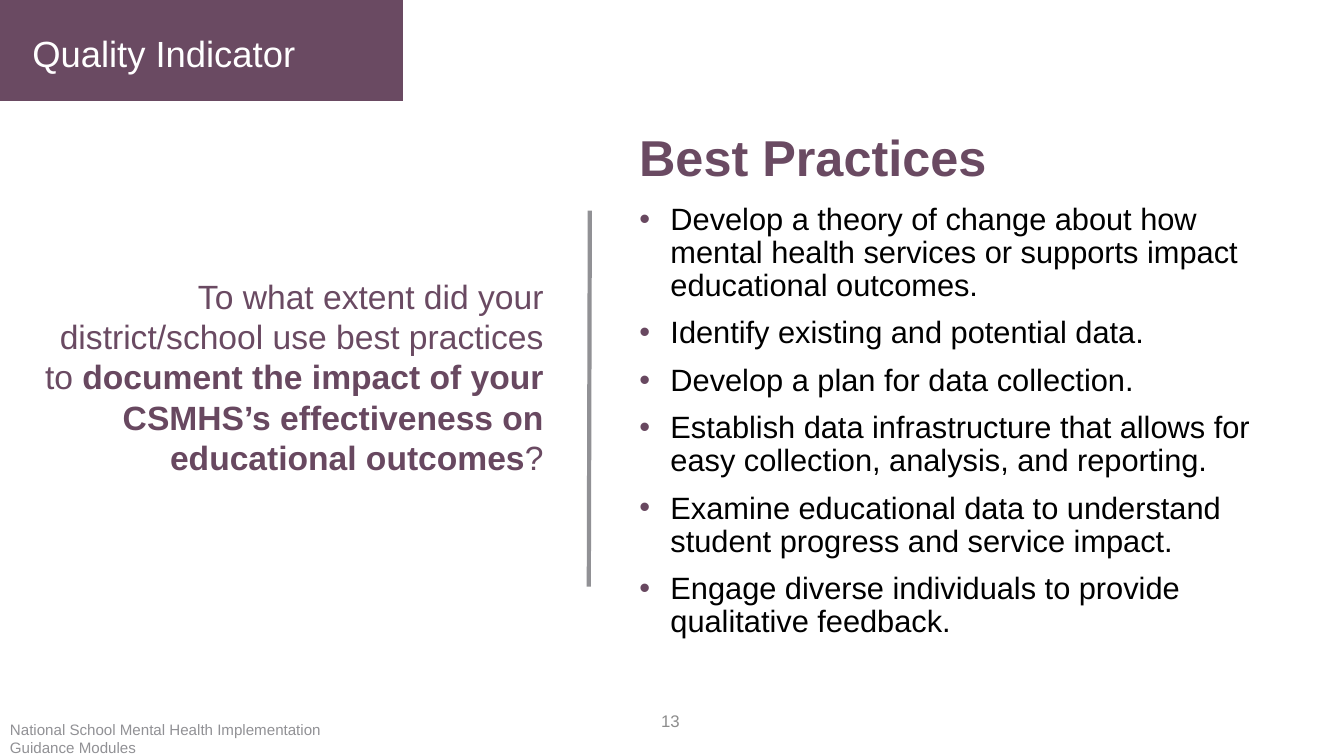
from lxml import etree
from pptx import Presentation
from pptx.dml.color import RGBColor
from pptx.enum import shapes, text
from pptx.oxml.ns import qn
from pptx.util import Inches, Pt

# Content
HEAD = "Quality Indicator"
ASK = [
    ("To what extent did your district/school use best practices to ", "plum", False),
    ("document the impact of your CSMHS’s effectiveness on educational outcomes", "dark", True),
    ("?", "plum", False),
]
LEAD = "Best Practices"
TIPS = [
    "Develop a theory of change about how mental health services or supports impact educational outcomes.",
    "Identify existing and potential data.",
    "Develop a plan for data collection.",
    "Establish data infrastructure that allows for easy collection, analysis, and reporting.",
    "Examine educational data to understand student progress and service impact.",
    "Engage diverse individuals to provide qualitative feedback.",
]
FOOT = "National School Mental Health Implementation Guidance Modules"
PAGE = "13"
HUES = {"plum": "6A4A62", "dark": "684860", "white": "FFFFFF", "black": "000000",
        "rule": "919195", "gray": "8C8C8C"}
FONT = "Arial"
TOP, MID = text.MSO_ANCHOR.TOP, text.MSO_ANCHOR.MIDDLE
LEFT, RIGHT = text.PP_ALIGN.LEFT, text.PP_ALIGN.RIGHT


def hue(name):
    return RGBColor.from_string(HUES[name])


def place(box, at, anchor=TOP):
    box.left, box.top, box.width, box.height = map(Inches, at)
    frame = box.text_frame
    frame.word_wrap = True
    frame.auto_size = text.MSO_AUTO_SIZE.NONE
    frame.vertical_anchor = anchor
    return frame


def write(para, runs, size, align=LEFT):
    para.alignment = align
    for words, color, bold in runs:
        run = para.add_run()
        run.text = words
        font = run.font
        font.name, font.size, font.bold = FONT, Pt(size), bold
        font.color.rgb = hue(color)


def bullet(para):
    props = para._p.get_or_add_pPr()
    props.set("marL", str(Inches(0.31)))
    props.set("indent", str(-Inches(0.31)))
    tint = etree.SubElement(props, qn("a:buClr"))
    etree.SubElement(tint, qn("a:srgbClr"), val=HUES["dark"])
    etree.SubElement(props, qn("a:buFont"), typeface=FONT)
    etree.SubElement(props, qn("a:buChar"), char="•")


deck = Presentation()
deck.slide_width, deck.slide_height = Inches(13.33), Inches(7.5)
slide = deck.slides.add_slide(deck.slide_layouts[1])
parts = slide.shapes

# Corner banner, sent behind the title
pen = parts.build_freeform(0, 0, scale=Inches(1))
pen.add_line_segments([(4.11, 0), (3.62, 1.05), (0, 1.05)], close=True)
flag = pen.convert_to_shape()
flag.shadow.inherit = False
flag.fill.solid()
flag.fill.fore_color.rgb = hue("plum")
flag.line.fill.background()
parts._spTree.insert(2, flag._element)

# Title
frame = place(parts.title, (0.22, 0.26, 2.9, 0.54))
write(frame.paragraphs[0], [(HEAD, "white", False)], 26)

# Single-paragraph texts: place, anchor, runs, size, alignment
NOTES = [
    ((0.32, 1.97, 5.17, 3.53), MID, ASK, 24, RIGHT),
    ((6.24, 1.2, 3.78, 0.71), TOP, [(LEAD, "plum", True)], 36, LEFT),
    ((0, 7.1, 3.81, 0.4), TOP, [(FOOT, "rule", False)], 10.8, LEFT),
    ((3.84, 6.95, 3, 0.4), MID, [(PAGE, "gray", False)], 12, RIGHT),
]
for at, anchor, runs, size, align in NOTES:
    frame = place(parts.add_textbox(0, 0, 0, 0), at, anchor)
    write(frame.paragraphs[0], runs, size, align)

# Best practice list
frame = place(slide.placeholders[1], (6.24, 1.97, 6.66, 4.59))
for i, tip in enumerate(TIPS):
    para = frame.add_paragraph() if i else frame.paragraphs[0]
    bullet(para)
    para.line_spacing = 0.9
    para.space_before = Pt(10 if i else 0)
    write(para, [(tip, "black", False)], 22)

# Divider
rule = parts.add_connector(shapes.MSO_CONNECTOR.STRAIGHT, Inches(5.85), Inches(2.09),
                           Inches(5.84), Inches(5.82))
rule.line.color.rgb = hue("rule")
rule.line.width = Pt(3)
etree.SubElement(rule._element.spPr, qn("a:effectLst"))

deck.save("out.pptx")
